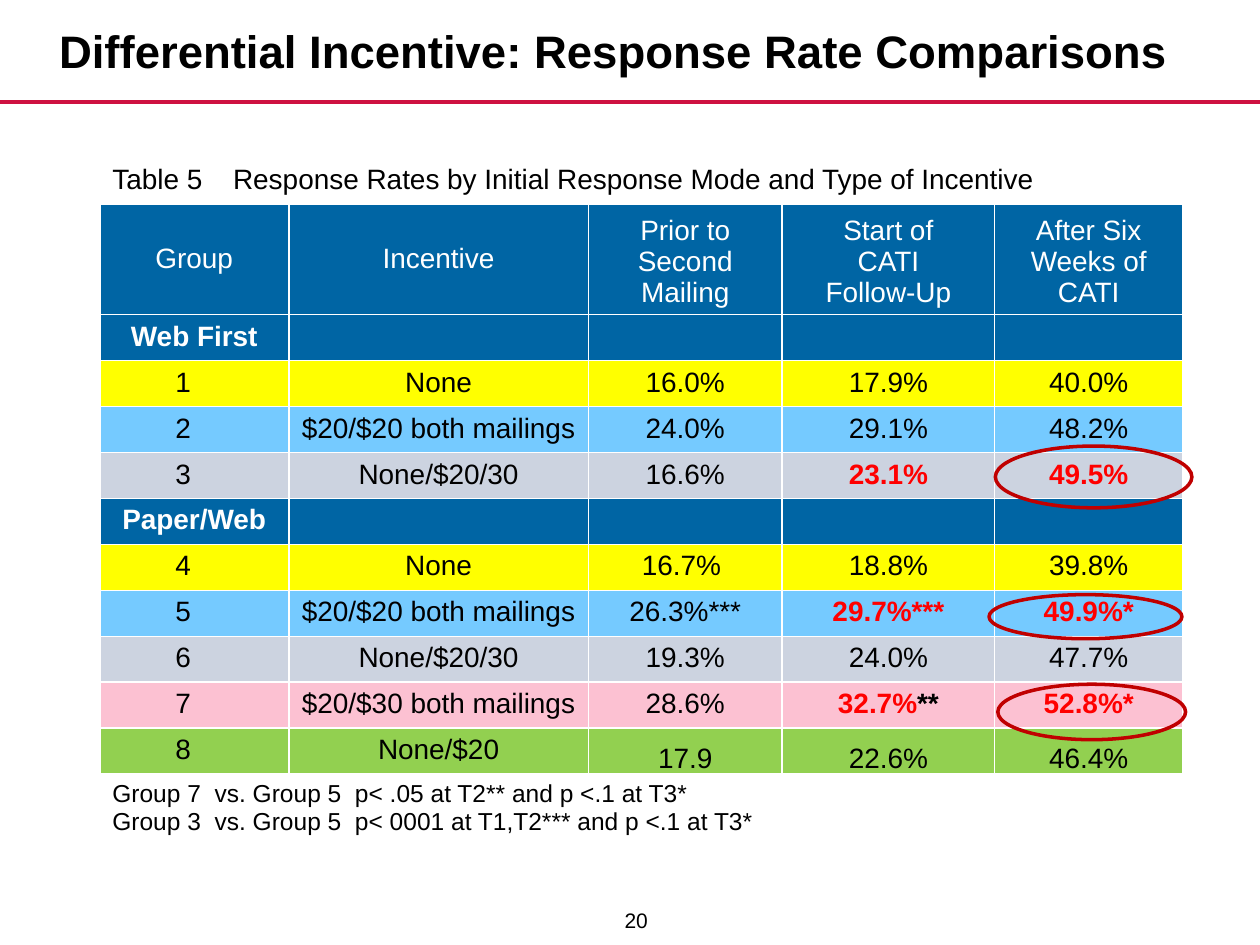
"""Build the slide comparing response rates under differential incentives."""

from typing import NamedTuple

from lxml import etree
from pptx import Presentation
from pptx.dml.color import RGBColor
from pptx.enum.shapes import MSO_CONNECTOR, MSO_SHAPE
from pptx.enum.text import MSO_ANCHOR, PP_ALIGN
from pptx.oxml.ns import qn
from pptx.util import Pt

LEFT, CENTER, RIGHT = PP_ALIGN.LEFT, PP_ALIGN.CENTER, PP_ALIGN.RIGHT
TOP, MIDDLE, BOTTOM = MSO_ANCHOR.TOP, MSO_ANCHOR.MIDDLE, MSO_ANCHOR.BOTTOM
STRAIGHT, OVAL = MSO_CONNECTOR.STRAIGHT, MSO_SHAPE.OVAL

BLACK = RGBColor(0x00, 0x00, 0x00)
WHITE = RGBColor(0xFF, 0xFF, 0xFF)
RED = RGBColor(0xFF, 0x00, 0x00)
DARK_RED = RGBColor(0xC0, 0x00, 0x00)
CRIMSON = RGBColor(0xCE, 0x11, 0x41)
NAVY = RGBColor(0x00, 0x65, 0xA4)
YELLOW = RGBColor(0xFF, 0xFF, 0x00)
SKY = RGBColor(0x75, 0xCA, 0xFF)
GRAY = RGBColor(0xCC, 0xD3, 0xE0)
PINK = RGBColor(0xFC, 0xC1, 0xD2)
GREEN = RGBColor(0x92, 0xD0, 0x50)

FONT = "Arial"
COLUMN_WIDTHS = (108, 171.2, 110.8, 121.4, 107.6)
ROW_HEIGHTS = (27.2, 63.4) + (26.25,) * 10 + (78.5,)
CAPTION = "Table 5\tResponse Rates by Initial Response Mode and Type of Incentive"
NOTES = (
    "Group 7  vs. Group 5  p< .05 at T2** and p <.1 at T3*\n"
    "Group 3  vs. Group 5  p< 0001 at T1,T2*** and p <.1 at T3*"
)
HEADERS = (
    "Group",
    "Incentive",
    "Prior to\nSecond\nMailing",
    "Start of\nCATI\nFollow-Up",
    "After Six\vWeeks of\vCATI",
)


class Box(NamedTuple):
    left: float
    top: float
    width: float
    height: float


class TextStyle(NamedTuple):
    size: float = 16
    color: RGBColor = BLACK
    bold: bool = False
    align: PP_ALIGN = CENTER
    anchor: MSO_ANCHOR = TOP


class Group(NamedTuple):
    fill: RGBColor
    incentive: str
    rates: tuple
    highlighted: bool = False


SECTIONS = {
    "Web First": (
        Group(YELLOW, "None", ("16.0%", "17.9%", "40.0%")),
        Group(SKY, "$20/$20 both mailings", ("24.0%", "29.1%", "48.2%")),
        Group(GRAY, "None/$20/30", ("16.6%", "23.1%", "49.5%"), True),
    ),
    "Paper/Web": (
        Group(YELLOW, "None", ("16.7% ", "18.8%", "39.8%")),
        Group(SKY, "$20/$20 both mailings", ("26.3%***", "29.7%***", "49.9%*"), True),
        Group(GRAY, "None/$20/30", ("19.3%", "24.0%", "47.7%")),
        Group(PINK, "$20/$30 both mailings", ("28.6%", "32.7%", "52.8%*"), True),
        Group(GREEN, "None/$20", ("17.9", "22.6%", "46.4%")),
    ),
}
HIGHLIGHT_RINGS = (
    Box(570.2, 391, 107.3, 31.7),
    Box(568.8, 254.9, 112.3, 35.3),
    Box(565.2, 339.8, 110.2, 25.2),
)


def write_text(text_frame, text: str, style: TextStyle) -> None:
    """Fill a text frame with evenly styled paragraphs."""
    text_frame.text = text
    for paragraph in text_frame.paragraphs:
        paragraph.alignment = style.align
        paragraph.font.name = FONT
        paragraph.font.size = Pt(style.size)
        paragraph.font.bold = style.bold
        paragraph.font.color.rgb = style.color


def add_text(slide, box: Box, text: str, style: TextStyle) -> None:
    """Add a wrapped text box."""
    text_frame = slide.shapes.add_textbox(*map(Pt, box)).text_frame
    text_frame.word_wrap = True
    text_frame.vertical_anchor = style.anchor
    write_text(text_frame, text, style)


def fill_cell(cell, text: str, fill: RGBColor | None, style: TextStyle) -> None:
    """Give a table cell its white borders, fill and text."""
    properties = cell._tc.get_or_add_tcPr()
    for side in ("a:lnL", "a:lnR", "a:lnT", "a:lnB"):
        border = etree.SubElement(properties, qn(side), w=str(Pt(1)))
        solid = etree.SubElement(border, qn("a:solidFill"))
        etree.SubElement(solid, qn("a:srgbClr"), val=str(WHITE))
    if fill is None:
        cell.fill.background()
    else:
        cell.fill.solid()
        cell.fill.fore_color.rgb = fill
    cell.vertical_anchor = style.anchor
    write_text(cell.text_frame, text, style)
    if not text:
        etree.SubElement(cell.text_frame.paragraphs[0]._p, qn("a:endParaRPr"), sz=str(style.size * 100))


def fill_full_row(table, row: int, text: str, style: TextStyle) -> None:
    """Merge a whole row and write one text in it."""
    last_column = len(COLUMN_WIDTHS) - 1
    table.cell(row, 0).merge(table.cell(row, last_column))
    for column in range(last_column + 1):
        fill_cell(table.cell(row, column), "" if column else text, None, style)


def fill_group_row(table, row: int, number: int, group: Group) -> None:
    """Write the number, incentive and rates of one group."""
    fill_cell(table.cell(row, 0), str(number), group.fill, TextStyle(align=LEFT))
    table.cell(row, 0).text_frame.paragraphs[0]._p.get_or_add_pPr().set("marL", str(Pt(36)))
    fill_cell(table.cell(row, 1), group.incentive, group.fill, TextStyle())
    for column, rate in enumerate(group.rates, 2):
        marked = group.highlighted and column > 2
        style = TextStyle(color=RED if marked else BLACK, bold=marked)
        cell = table.cell(row, column)
        if group.fill == GREEN:
            style = style._replace(anchor=BOTTOM)
            cell.margin_left = cell.margin_top = cell.margin_right = Pt(0.7)
            cell.margin_bottom = Pt(0)
        fill_cell(cell, rate, group.fill, style)


def add_rate_table(slide) -> None:
    """Add the table of response rates."""
    frame = slide.shapes.add_table(
        len(ROW_HEIGHTS), len(COLUMN_WIDTHS),
        Pt(57), Pt(89.3), Pt(sum(COLUMN_WIDTHS)), Pt(sum(ROW_HEIGHTS)),
    )
    table = frame.table
    for column, width in zip(table.columns, COLUMN_WIDTHS):
        column.width = Pt(width)
    for row, height in zip(table.rows, ROW_HEIGHTS):
        row.height = Pt(height)

    caption = table.cell(0, 0)
    fill_full_row(table, 0, CAPTION, TextStyle(align=LEFT, anchor=MIDDLE))
    properties = caption.text_frame.paragraphs[0]._p.get_or_add_pPr()
    tabs = etree.Element(qn("a:tabLst"))
    etree.SubElement(tabs, qn("a:tab"), pos=str(Pt(69)), algn="l")
    properties.insert(0, tabs)

    for column, header in enumerate(HEADERS):
        anchor = BOTTOM if column > 1 else MIDDLE
        fill_cell(table.cell(1, column), header, NAVY, TextStyle(color=WHITE, anchor=anchor))

    row, number = 2, 1
    for section, groups in SECTIONS.items():
        for column in range(len(COLUMN_WIDTHS)):
            title = "" if column else section
            fill_cell(table.cell(row, column), title, NAVY, TextStyle(color=WHITE, bold=True))
        for row, group in enumerate(groups, row + 1):
            fill_group_row(table, row, number, group)
            if group.fill == PINK:
                stars = table.cell(row, 3).text_frame.paragraphs[0].add_run()
                stars.text = "**"
                stars.font.color.rgb = BLACK
            number += 1
        row += 1
    fill_full_row(table, row, NOTES, TextStyle(size=14, align=LEFT))


def add_rule(slide) -> None:
    """Add the line under the title."""
    rule = slide.shapes.add_connector(STRAIGHT, Pt(0), Pt(58.3), Pt(720), Pt(58.3))
    rule.line.color.rgb = CRIMSON
    rule.line.width = Pt(2)
    etree.SubElement(rule._element.spPr, qn("a:effectLst"))


def add_ring(slide, box: Box) -> None:
    """Add an unfilled ellipse around a rate."""
    ring = slide.shapes.add_shape(OVAL, *map(Pt, box))
    ring.shadow.inherit = False
    ring.fill.background()
    ring.line.color.rgb = DARK_RED
    ring.line.width = Pt(2)


def main() -> None:
    """Build and save the slide."""
    presentation = Presentation()
    presentation.slide_width, presentation.slide_height = Pt(720), Pt(540)
    slide = presentation.slides.add_slide(presentation.slide_layouts[6])
    add_rule(slide)
    add_rate_table(slide)
    add_text(slide, Box(0, 2.2, 701.3, 52.6), "Differential Incentive: Response Rate Comparisons",
             TextStyle(size=26, bold=True, anchor=MIDDLE))
    add_text(slide, Box(342.7, 511.2, 34.6, 28.8), "20",
             TextStyle(size=12, align=RIGHT, anchor=MIDDLE))
    for box in HIGHLIGHT_RINGS:
        add_ring(slide, box)
    presentation.save("out.pptx")


if __name__ == "__main__":
    main()
